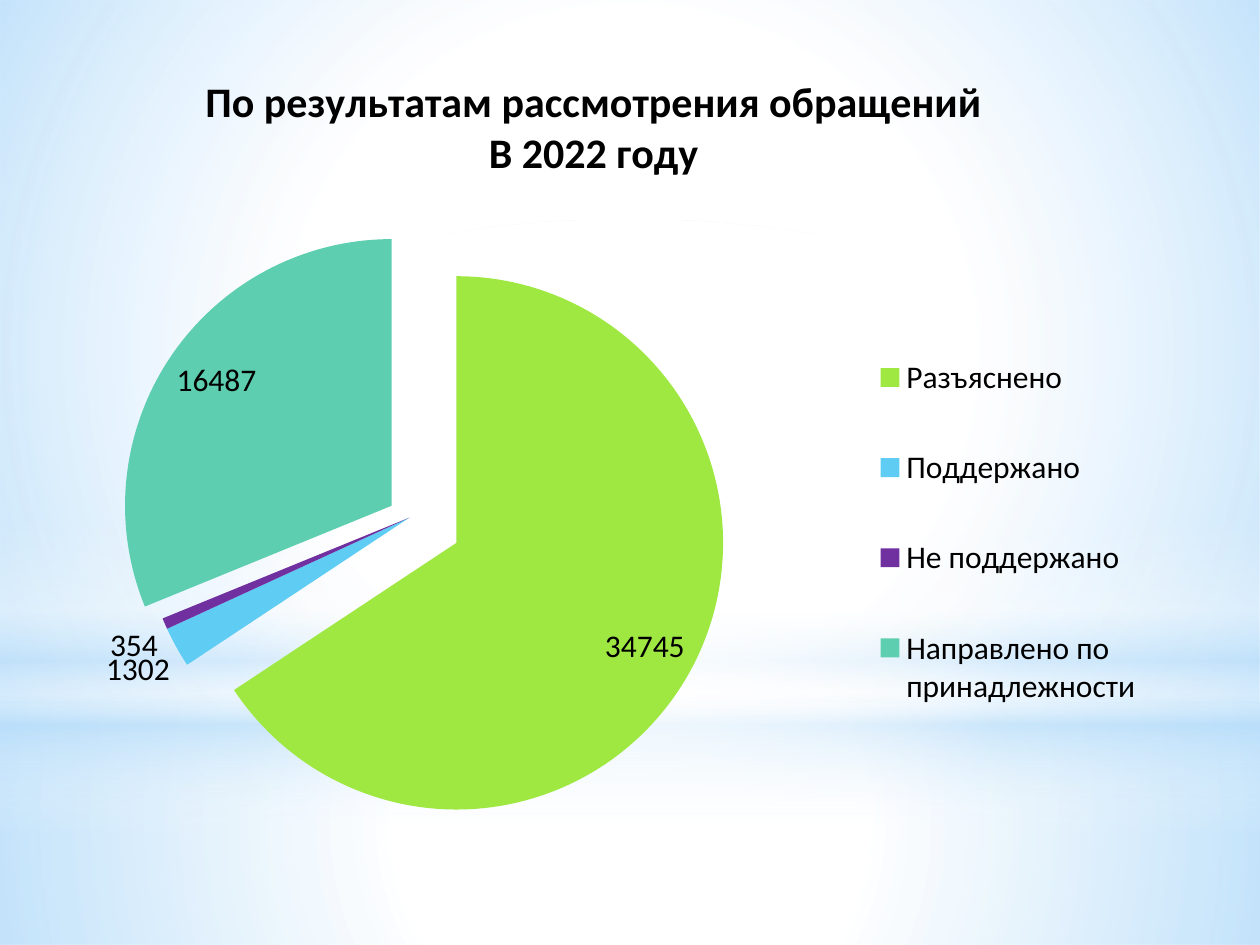
from lxml import etree
from pptx import Presentation
from pptx.chart.data import CategoryChartData
from pptx.dml.color import RGBColor
from pptx.enum.chart import XL_CHART_TYPE, XL_LABEL_POSITION, XL_LEGEND_POSITION
from pptx.enum.shapes import MSO_SHAPE
from pptx.enum.text import PP_ALIGN
from pptx.oxml.ns import qn
from pptx.util import Pt

EMU_PER_PX = 914400 / 126
WIDTH, HEIGHT = 1260, 945
RECTANGLE, OVAL = MSO_SHAPE.RECTANGLE, MSO_SHAPE.OVAL
PIE, RIGHT, CENTER = XL_CHART_TYPE.PIE, XL_LEGEND_POSITION.RIGHT, PP_ALIGN.CENTER
INSIDE, OUTSIDE = XL_LABEL_POSITION.INSIDE_END, XL_LABEL_POSITION.OUTSIDE_END
FONT = "Calibri"
COLORS = {
    "white": "FFFFFF", "sky": "B4DCFA", "text": "000000",
    "green": "9FE842", "blue": "5ECCF3", "purple": "7030A0", "teal": "5DCEAF",
}
TITLE_LINES = ["По результатам рассмотрения обращений", "В 2022 году"]
# category, value, colour, explosion in percent, label position
SLICES = [
    ("Разъяснено", 34745, "green", 20, INSIDE),
    ("Поддержано", 1302, "blue", 0, OUTSIDE),
    ("Не поддержано", 354, "purple", 0, OUTSIDE),
    ("Направлено по принадлежности", 16487, "teal", 8, INSIDE),
]


def px(length):
    return round(length * EMU_PER_PX)


def rgb(name):
    return RGBColor.from_string(COLORS[name])


def style_font(font, size, bold=False):
    font.name, font.size, font.bold = FONT, Pt(size), bold
    font.color.rgb = rgb("text")


def add_glow(slide, box, kind, stops, radial=True):
    """Add a gradient shape; stops are (position %, colour, opacity %)."""
    shape = slide.shapes.add_shape(kind, *map(px, box))
    shape.shadow.inherit = False
    shape.line.fill.background()
    shape.fill.background()
    gradient = etree.Element(qn("a:gradFill"), rotWithShape="1")
    stop_list = etree.SubElement(gradient, qn("a:gsLst"))
    for position, color, opacity in stops:
        stop = etree.SubElement(stop_list, qn("a:gs"), pos=str(position * 1000))
        fill = etree.SubElement(stop, qn("a:srgbClr"), val=COLORS[color])
        etree.SubElement(fill, qn("a:alpha"), val=str(opacity * 1000))
    if radial:
        path = etree.SubElement(gradient, qn("a:path"), {"path": "circle"})
        sides = dict.fromkeys("ltrb", "50000")
        etree.SubElement(path, qn("a:fillToRect"), sides)
    else:
        etree.SubElement(gradient, qn("a:lin"), ang="5400000", scaled="0")
    properties = shape.element.spPr
    properties.replace(properties.find(qn("a:noFill")), gradient)


def add_backdrop(slide, box):
    left, top, width, height = box
    horizon = 703
    add_glow(slide, (left, top + horizon, width, height - horizon), RECTANGLE,
             [(0, "white", 91), (37, "white", 76), (100, "sky", 79)])
    add_glow(slide, (left, top, width, horizon), RECTANGLE,
             [(0, "white", 89), (48, "white", 62), (100, "sky", 79)])
    add_glow(slide, (left, top + 519, width, 315), RECTANGLE,
             [(0, "white", 0), (29, "white", 30), (45, "sky", 40),
              (55, "white", 26), (65, "sky", 60), (100, "white", 0)], radial=False)
    add_glow(slide, (left, top + 220, width, horizon), OVAL,
             [(0, "white", 100), (56, "white", 0)])


def place_part(chart, tag, index, fractions, inner=False):
    """Give a chart part a manual layout, as fractions x, y, w, h of the chart."""
    part = chart.element.find(f".//{qn(tag)}")
    for old in part.findall(qn("c:layout")):
        part.remove(old)
    layout = etree.Element(qn("c:layout"))
    manual = etree.SubElement(layout, qn("c:manualLayout"))
    if inner:
        etree.SubElement(manual, qn("c:layoutTarget"), val="inner")
    for name in "xy":
        etree.SubElement(manual, qn(f"c:{name}Mode"), val="edge")
    for name, value in zip("xywh", fractions):
        etree.SubElement(manual, qn(f"c:{name}"), val=str(value))
    part.insert(index, layout)


def add_explosion(successor, percent):
    explosion = etree.Element(qn("c:explosion"), val=str(percent))
    successor.addprevious(explosion)


def add_title(chart):
    chart.has_title = True
    frame = chart.chart_title.text_frame
    for number, line in enumerate(TITLE_LINES):
        paragraph = frame.add_paragraph() if number else frame.paragraphs[0]
        paragraph.alignment = CENTER
        run = paragraph.add_run()
        run.text = line
        style_font(run.font, 24, bold=True)
    place_part(chart, "c:title", 1, (0.16, 0.07))


def add_legend(chart):
    chart.has_legend = True
    chart.legend.position = RIGHT
    chart.legend.include_in_layout = False
    style_font(chart.legend.font, 18)
    place_part(chart, "c:legend", 1, (0.69, 0.32, 0.22, 0.48))


def style_slices(chart):
    plot = chart.plots[0]
    plot.vary_by_categories = True
    plot.has_data_labels = True
    plot.data_labels.show_value = True
    style_font(plot.data_labels.font, 18)
    points = plot.series[0].points
    for number, (_, _, color, _, position) in enumerate(SLICES):
        point = points[number]
        point.format.fill.solid()
        point.format.fill.fore_color.rgb = rgb(color)
        point.format.line.fill.background()
        point.data_label.position = position
        style_font(point.data_label.font, 18)
    data_points = chart.element.findall(f".//{qn('c:dPt')}")
    add_explosion(data_points[0], 25)
    for data_point, (_, _, _, percent, _) in zip(data_points, SLICES):
        add_explosion(data_point.find(qn("c:spPr")), percent)


def add_results_chart(slide, box):
    data = CategoryChartData()
    data.categories = [entry[0] for entry in SLICES]
    data.add_series("Series 1", [entry[1] for entry in SLICES])
    chart = slide.shapes.add_chart(PIE, *map(px, box), data).chart
    style_font(chart.font, 18)
    add_title(chart)
    add_legend(chart)
    style_slices(chart)
    place_part(chart, "c:plotArea", 0, (0.06, 0.19, 0.53, 0.71), inner=True)


def main():
    presentation = Presentation()
    presentation.slide_width, presentation.slide_height = px(WIDTH), px(HEIGHT)
    slide = presentation.slides.add_slide(presentation.slide_layouts[6])
    slide.background.fill.solid()
    slide.background.fill.fore_color.rgb = rgb("white")
    add_backdrop(slide, (0, 0, WIDTH, HEIGHT))
    add_results_chart(slide, (0, 6, WIDTH, HEIGHT - 6))
    presentation.save("out.pptx")


if __name__ == "__main__":
    main()
